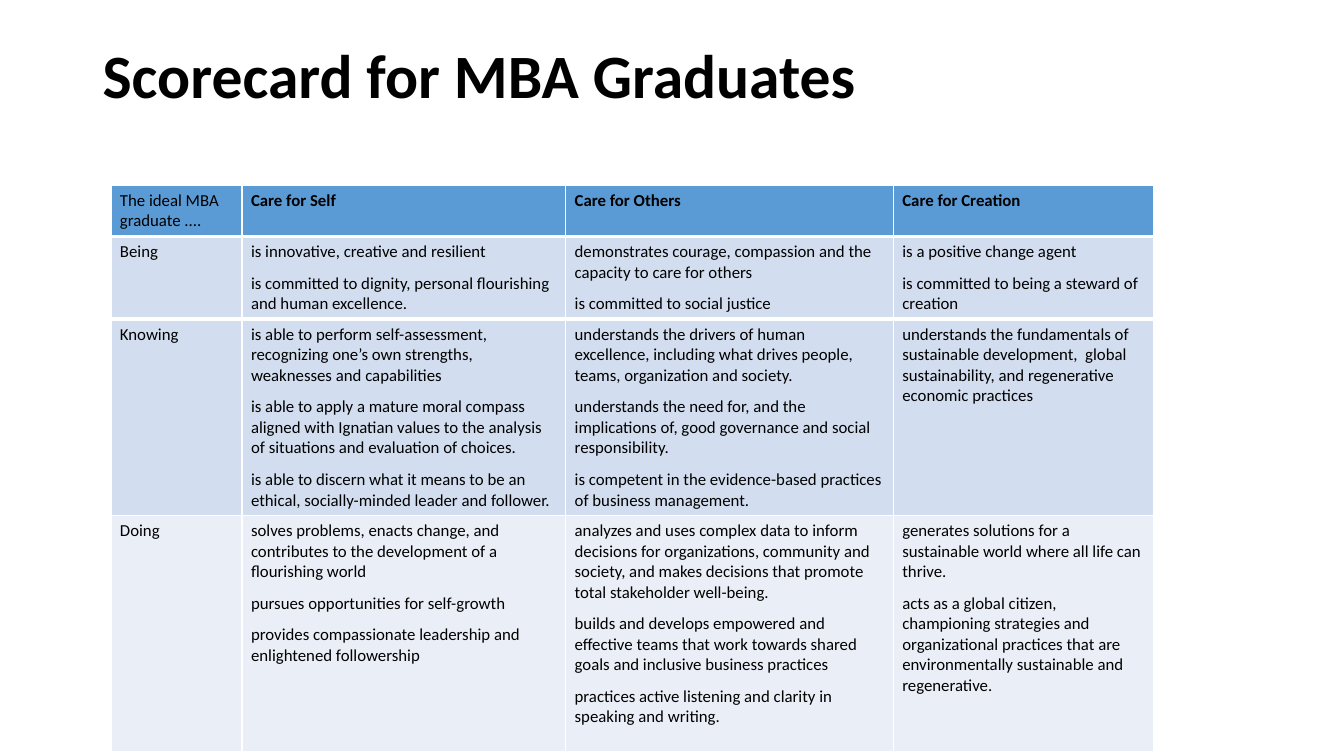
from lxml.etree import SubElement
from pptx import Presentation
from pptx.dml.color import RGBColor
from pptx.enum.text import MSO_ANCHOR as Anchor
from pptx.oxml.ns import qn
from pptx.util import Inches, Pt

BLACK = RGBColor(0x00, 0x00, 0x00)
WHITE = RGBColor(0xFF, 0xFF, 0xFF)
HEADER_BLUE = RGBColor(0x5B, 0x9B, 0xD5)
BAND_BLUE = RGBColor(0xD2, 0xDE, 0xEF)
PALE_BLUE = RGBColor(0xEA, 0xEF, 0xF7)
FONT = "Calibri"

COLUMN_WIDTHS = [1.3, 3.21, 3.25, 2.58]
ROW_HEIGHTS = [0.49, 0.81, 1.94, 2.34]
ROW_FILLS = [HEADER_BLUE, BAND_BLUE, BAND_BLUE, PALE_BLUE]
RULE_WIDTHS = [1, 3, 3, 1, 1]  # points, from the top edge to the bottom edge

# Each cell is a list of paragraphs
SCORECARD = [
    [["The ideal MBA graduate ...."], ["Care for Self"], ["Care for Others"], ["Care for Creation"]],
    [
        ["Being"],
        ["is innovative, creative and resilient",
         "is committed to dignity, personal flourishing and human excellence."],
        ["demonstrates courage, compassion and the capacity to care for others",
         "is committed to social justice"],
        ["is a positive change agent",
         "is committed to being a steward of creation"],
    ],
    [
        ["Knowing"],
        ["is able to perform self-assessment, recognizing one’s own strengths, "
         "weaknesses and capabilities",
         "is able to apply a mature moral compass aligned with Ignatian values to the "
         "analysis of situations and evaluation of choices.",
         "is able to discern what it means to be an ethical, socially-minded leader and follower."],
        ["understands the drivers of human excellence, including what drives people, "
         "teams, organization and society.",
         "understands the need for, and the implications of, good governance and "
         "social responsibility.",
         "is competent in the evidence-based practices of business management."],
        ["understands the fundamentals of sustainable development,  global "
         "sustainability, and regenerative economic practices"],
    ],
    [
        ["Doing"],
        ["solves problems, enacts change, and contributes to the development of a "
         "flourishing world",
         "pursues opportunities for self-growth",
         "provides compassionate leadership and enlightened followership"],
        ["analyzes and uses complex data to inform decisions for organizations, community "
         "and society, and makes decisions that promote total stakeholder well-being.",
         "builds and develops empowered and effective teams that work towards shared "
         "goals and inclusive business practices",
         "practices active listening and clarity in speaking and writing."],
        ["generates solutions for a sustainable world where all life can thrive.",
         "acts as a global citizen, championing strategies and organizational practices "
         "that are environmentally sustainable and regenerative."],
    ],
]


def write_text(frame, paragraphs, size, bold=False, color=BLACK, space_after=0, line_spacing=1.0):
    frame.word_wrap = True
    for index, text in enumerate(paragraphs):
        para = frame.add_paragraph() if index else frame.paragraphs[0]
        para.space_after = Pt(space_after)
        para.line_spacing = line_spacing
        span = para.add_run()
        span.text = text
        span.font.name = FONT
        span.font.size = Pt(size)
        span.font.bold = bold
        span.font.color.rgb = color


def set_borders(cell, top, bottom):
    properties = cell._tc.get_or_add_tcPr()
    widths = {"a:lnL": 1, "a:lnR": 1, "a:lnT": top, "a:lnB": bottom}
    for index, (tag, width) in enumerate(widths.items()):
        line = SubElement(properties, qn(tag), w=str(Pt(width)))
        fill = SubElement(line, qn("a:solidFill"))
        SubElement(fill, qn("a:srgbClr"), val=str(WHITE))
        properties.insert(index, line)  # borders come before the cell fill


def add_title(page, left, top, width, height):
    box = page.shapes.add_textbox(Inches(left), Inches(top), Inches(width), Inches(height))
    box.text_frame.vertical_anchor = Anchor.TOP
    write_text(box.text_frame, ["Scorecard for MBA Graduates"], 44, bold=True, line_spacing=0.9)


def add_scorecard(page, left, top):
    frame = page.shapes.add_table(
        len(SCORECARD), len(COLUMN_WIDTHS), Inches(left), Inches(top),
        Inches(sum(COLUMN_WIDTHS)), Inches(sum(ROW_HEIGHTS)))
    table = frame.table
    for column, width in zip(table.columns, COLUMN_WIDTHS):
        column.width = Inches(width)
    for row, height in zip(table.rows, ROW_HEIGHTS):
        row.height = Inches(height)

    for r, row_texts in enumerate(SCORECARD):
        for c, paragraphs in enumerate(row_texts):
            cell = table.cell(r, c)
            cell.margin_left = cell.margin_right = Inches(0.09)
            cell.margin_top = cell.margin_bottom = Inches(0.05)
            cell.fill.solid()
            cell.fill.fore_color.rgb = ROW_FILLS[r]
            set_borders(cell, RULE_WIDTHS[r], RULE_WIDTHS[r + 1])
            write_text(cell.text_frame, paragraphs, 12, bold=r == 0 and c > 0, space_after=8)


def main():
    deck = Presentation()
    deck.slide_width = Inches(13.33)
    deck.slide_height = Inches(7.5)
    page = deck.slides.add_slide(deck.slide_layouts[6])
    add_scorecard(page, 1.1, 1.84)
    add_title(page, 0.92, 0.4, 11.5, 1.45)
    deck.save("out.pptx")


if __name__ == "__main__":
    main()
